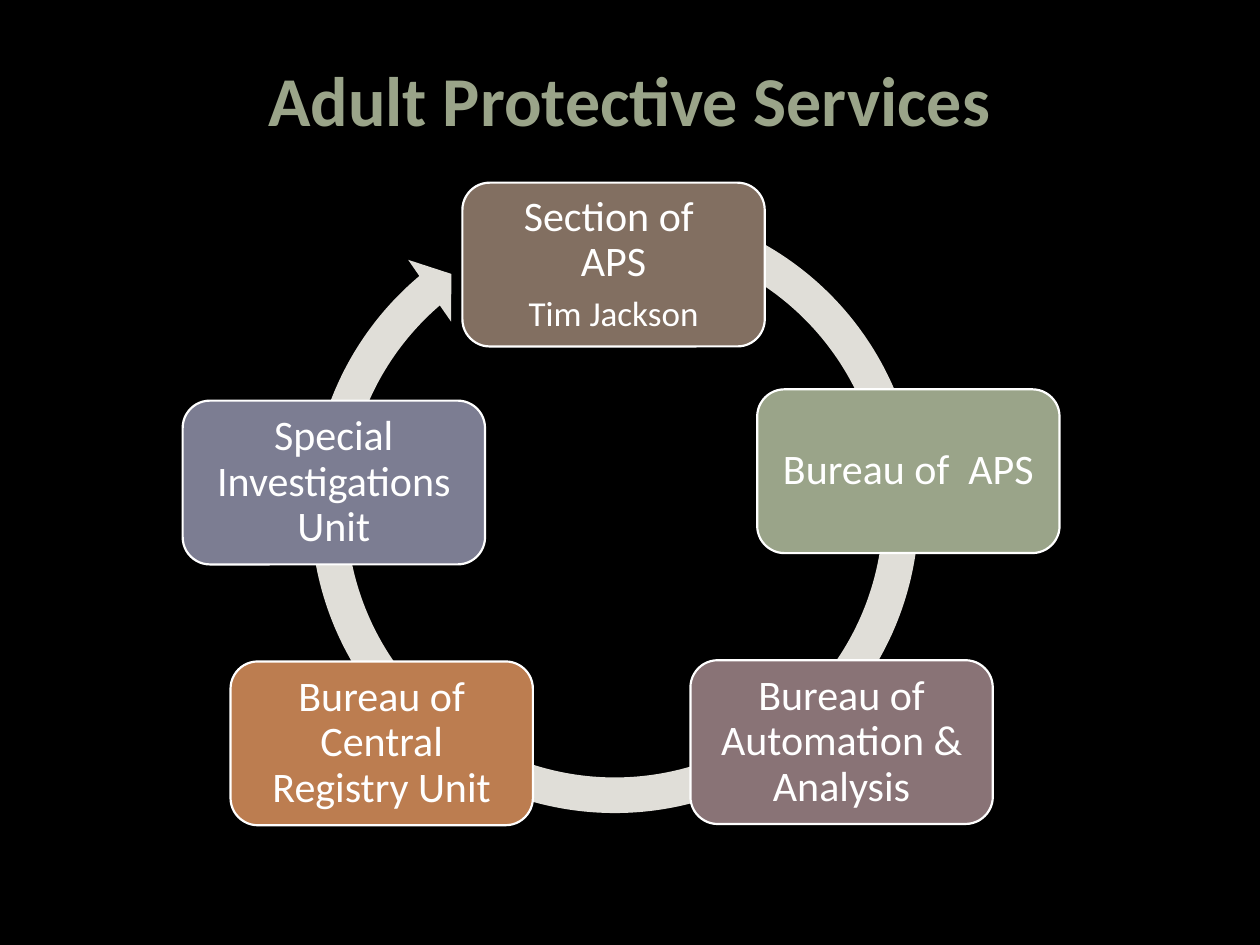
"""Build the Adult Protective Services cycle slide."""
from dataclasses import dataclass

from pptx import Presentation
from pptx.dml.color import RGBColor
from pptx.enum.shapes import MSO_SHAPE
from pptx.enum.text import MSO_ANCHOR, PP_ALIGN
from pptx.shapes.autoshape import Shape
from pptx.slide import Slide
from pptx.util import Inches, Pt

WHITE = "FFFFFF"
BOX_WIDTH, BOX_HEIGHT = 2.4, 1.3
ARROW_ADJUSTMENTS = (0.055, 3.307, 137.813, 173.827, 0.058)


@dataclass(frozen=True)
class Line:
    text: str
    size: int = 24
    space_after: int = 0


@dataclass(frozen=True)
class Unit:
    left: float
    top: float
    fill: str
    lines: tuple[Line, ...]


UNITS = (
    Unit(3.67, 1.45, "826F61", (Line("Section of "), Line("APS", space_after=6), Line("Tim Jackson", 20))),
    Unit(6.01, 3.09, "9AA489", (Line("Bureau of  APS"),)),
    Unit(5.48, 5.24, "897376", (Line("Bureau of Automation & Analysis"),)),
    Unit(1.83, 5.25, "BC7D50", (Line("Bureau of Central Registry Unit"),)),
    Unit(1.45, 3.18, "7C7D92", (Line("Special Investigations Unit"),)),
)


def color(value: str) -> RGBColor:
    return RGBColor.from_string(value)


def apply(target: object, formats: dict[str, object]) -> None:
    for name, value in formats.items():
        setattr(target, name, value)


def write(shape: Shape, lines: tuple[Line, ...], text_color: str, inset: float,
          line_spacing: float = 1.0, bold: bool = False) -> None:
    frame = shape.text_frame
    margins = {f"margin_{side}": Inches(inset) for side in ("left", "top", "right", "bottom")}
    apply(frame, {"word_wrap": True, "vertical_anchor": MSO_ANCHOR.MIDDLE, **margins})
    for index, line in enumerate(lines):
        paragraph = frame.add_paragraph() if index else frame.paragraphs[0]
        apply(paragraph, {"alignment": PP_ALIGN.CENTER, "line_spacing": line_spacing,
                          "space_after": Pt(line.space_after)})
        run = paragraph.add_run()
        run.text = line.text
        apply(run.font, {"name": "Calibri", "size": Pt(line.size), "bold": bold})
        run.font.color.rgb = color(text_color)


def add_filled(slide: Slide, kind: MSO_SHAPE, left: float, top: float,
               width: float, height: float, fill: str) -> Shape:
    shape = slide.shapes.add_shape(kind, Inches(left), Inches(top), Inches(width), Inches(height))
    shape.shadow.inherit = False
    shape.fill.solid()
    shape.fill.fore_color.rgb = color(fill)
    return shape


def add_title(slide: Slide) -> None:
    title = slide.shapes.add_textbox(Inches(0.75), Inches(0.25), Inches(8.49), Inches(1.06))
    write(title, (Line("Adult Protective Services", 40),), "9AA489", 0.05, bold=True)


def add_cycle_arrow(slide: Slide) -> None:
    arrow = add_filled(slide, MSO_SHAPE.CIRCULAR_ARROW, 2.31, 1.47, 5.14, 5.14, "E0DED8")
    arrow.line.fill.background()
    for index, value in enumerate(ARROW_ADJUSTMENTS):
        arrow.adjustments[index] = value


def add_unit(slide: Slide, unit: Unit) -> None:
    box = add_filled(slide, MSO_SHAPE.ROUNDED_RECTANGLE, unit.left, unit.top,
                     BOX_WIDTH, BOX_HEIGHT, unit.fill)
    box.line.color.rgb = color(WHITE)
    box.line.width = Pt(1.25)
    write(box, unit.lines, WHITE, 0.1, line_spacing=0.9)


def main() -> None:
    presentation = Presentation()
    apply(presentation, {"slide_width": Inches(10), "slide_height": Inches(7.5)})
    slide = presentation.slides.add_slide(presentation.slide_layouts[6])
    slide.background.fill.solid()
    slide.background.fill.fore_color.rgb = color("000000")
    add_title(slide)
    add_cycle_arrow(slide)
    for unit in UNITS:
        add_unit(slide, unit)
    presentation.save("out.pptx")


if __name__ == "__main__":
    main()
